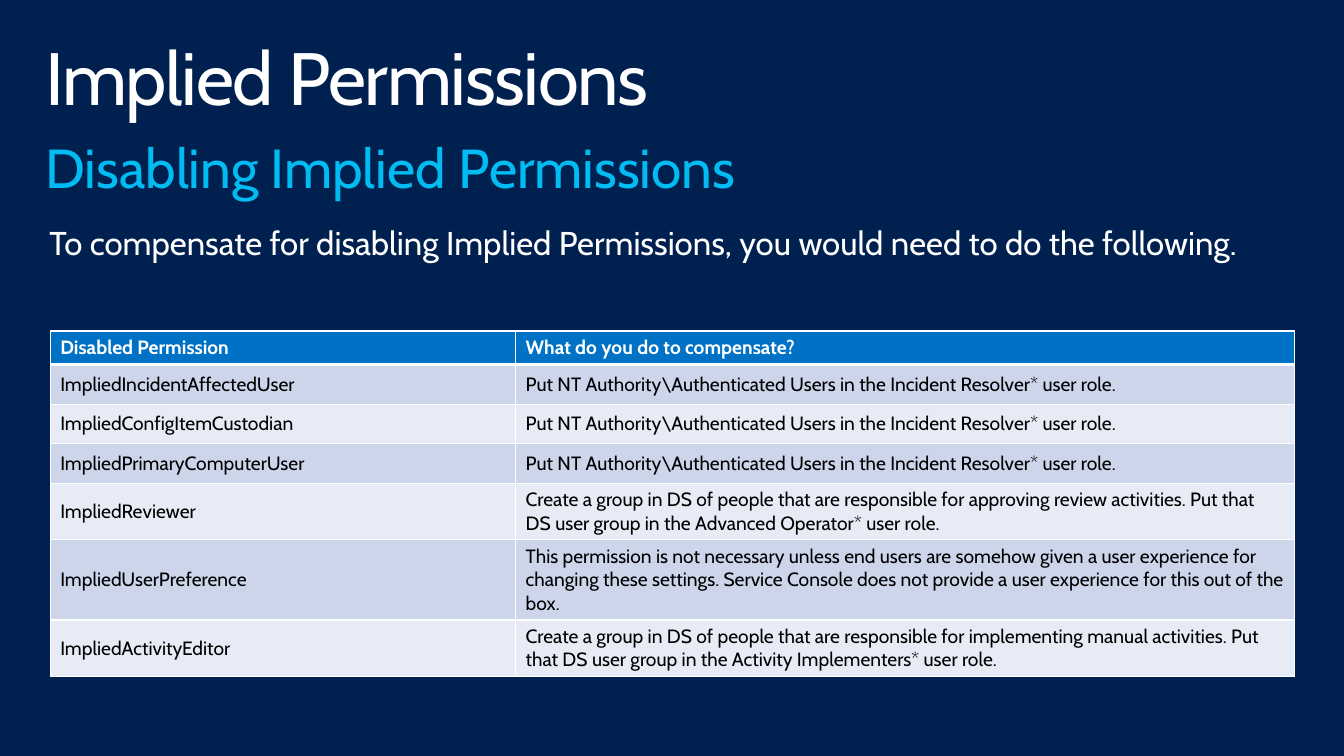
from lxml.etree import SubElement
from pptx import Presentation
from pptx.dml.color import RGBColor
from pptx.enum.text import MSO_ANCHOR as Anchor, MSO_AUTO_SIZE as AutoSize, PP_ALIGN as Align
from pptx.oxml.ns import qn
from pptx.util import Pt

PX = 9144  # 100 px to the inch
FONT = "Cabin"
TITLE_ONLY = 5

NAVY = RGBColor(0x00, 0x20, 0x50)
SKY = RGBColor(0x00, 0xBC, 0xF2)
BLUE = RGBColor(0x00, 0x72, 0xC6)
DARK_BAND = RGBColor(0xCC, 0xD5, 0xEA)
LIGHT_BAND = RGBColor(0xE7, 0xEB, 0xF5)
WHITE = RGBColor(0xFF, 0xFF, 0xFF)
BLACK = RGBColor(0x00, 0x00, 0x00)

RESOLVER = r"Put NT Authority\Authenticated Users in the Incident Resolver* user role."
ROWS = [
    ("Disabled Permission", "What do you do to compensate?"),
    ("ImpliedIncidentAffectedUser", RESOLVER),
    ("ImpliedConfigItemCustodian", RESOLVER),
    ("ImpliedPrimaryComputerUser", RESOLVER),
    ("ImpliedReviewer",
     "Create a group in DS of people that are responsible for approving review activities. "
     "Put that DS user group in the Advanced Operator* user role."),
    ("ImpliedUserPreference",
     "This permission is not necessary unless end users are somehow given a user experience "
     "for changing these settings. Service Console does not provide a user experience for "
     "this out of the box."),
    ("ImpliedActivityEditor",
     "Create a group in DS of people that are responsible for implementing manual activities. "
     "Put that DS user group in the Activity Implementers* user role."),
]
COLUMN_WIDTHS = [471, 788]
ROW_HEIGHTS = [34, 40, 40, 40, 57, 80, 57]


def set_format(target, **values):
    for name, value in values.items():
        setattr(target, name, value)


def write_run(para, text, size, color, bold=False):
    span = para.add_run()
    span.text = text
    set_format(span.font, name=FONT, size=Pt(size), bold=bold)
    span.font.color.rgb = color
    return span


def fill_box(box, bounds, insets, text, size, color):
    """Place a text shape and write its single line; insets are (side, top and bottom)."""
    left, top, width, height = (length * PX for length in bounds)
    side, end = (length * PX for length in insets)
    set_format(box, left=left, top=top, width=width, height=height)
    frame = box.text_frame
    set_format(frame, word_wrap=True, auto_size=AutoSize.NONE, vertical_anchor=Anchor.TOP,
               margin_left=side, margin_right=side, margin_top=end, margin_bottom=end)
    para = frame.paragraphs[0]
    set_format(para, alignment=Align.LEFT, line_spacing=0.9)
    return write_run(para, text, size, color)


def add_text(page, *content):
    return fill_box(page.shapes.add_textbox(0, 0, 0, 0), *content)


def add_borders(cell, widths):
    """Draw white cell edges; widths are points for left, right, top and bottom."""
    properties = cell._tc.get_or_add_tcPr()
    for edge, width in zip(("lnL", "lnR", "lnT", "lnB"), widths):
        line = SubElement(properties, qn(f"a:{edge}"), w=str(Pt(width)))
        SubElement(SubElement(line, qn("a:solidFill")), qn("a:srgbClr"), val=str(WHITE))


def fill_cell(cell, text, row):
    header = row == 0
    add_borders(cell, (1, 1, 3 if row == 1 else 1, 3 if header else 1))
    cell.fill.solid()
    cell.fill.fore_color.rgb = BLUE if header else DARK_BAND if row % 2 else LIGHT_BAND
    cell.vertical_anchor = Anchor.MIDDLE
    write_run(cell.text_frame.paragraphs[0], text, 14, WHITE if header else BLACK, header)


def add_permission_table(page, left, top):
    table = page.shapes.add_table(
        len(ROWS), len(COLUMN_WIDTHS), left * PX, top * PX,
        sum(COLUMN_WIDTHS) * PX, sum(ROW_HEIGHTS) * PX).table
    for column, width in zip(table.columns, COLUMN_WIDTHS):
        column.width = width * PX
    for row, (texts, height) in enumerate(zip(ROWS, ROW_HEIGHTS)):
        table.rows[row].height = height * PX
        for column, text in enumerate(texts):
            fill_cell(table.cell(row, column), text, row)


def main():
    deck = Presentation()
    set_format(deck, slide_width=1360 * PX, slide_height=765 * PX)
    page = deck.slides.add_slide(deck.slide_layouts[TITLE_ONLY])
    page.background.fill.solid()
    page.background.fill.fore_color.rgb = NAVY

    title = fill_box(page.shapes.title, (30, 32, 1300, 100), (16, 10),
                     "Implied Permissions", 54, WHITE)
    title._r.get_or_add_rPr().set("spc", "-100")
    add_text(page, (30, 133, 1300, 81), (16, 10), "Disabling Implied Permissions", 40, SKY)
    add_text(page, (30, 214, 1281, 105), (20, 16),
             "To compensate for disabling Implied Permissions, "
             "you would need to do the following.", 24, WHITE)
    add_permission_table(page, 51, 335)
    deck.save("out.pptx")


if __name__ == "__main__":
    main()
